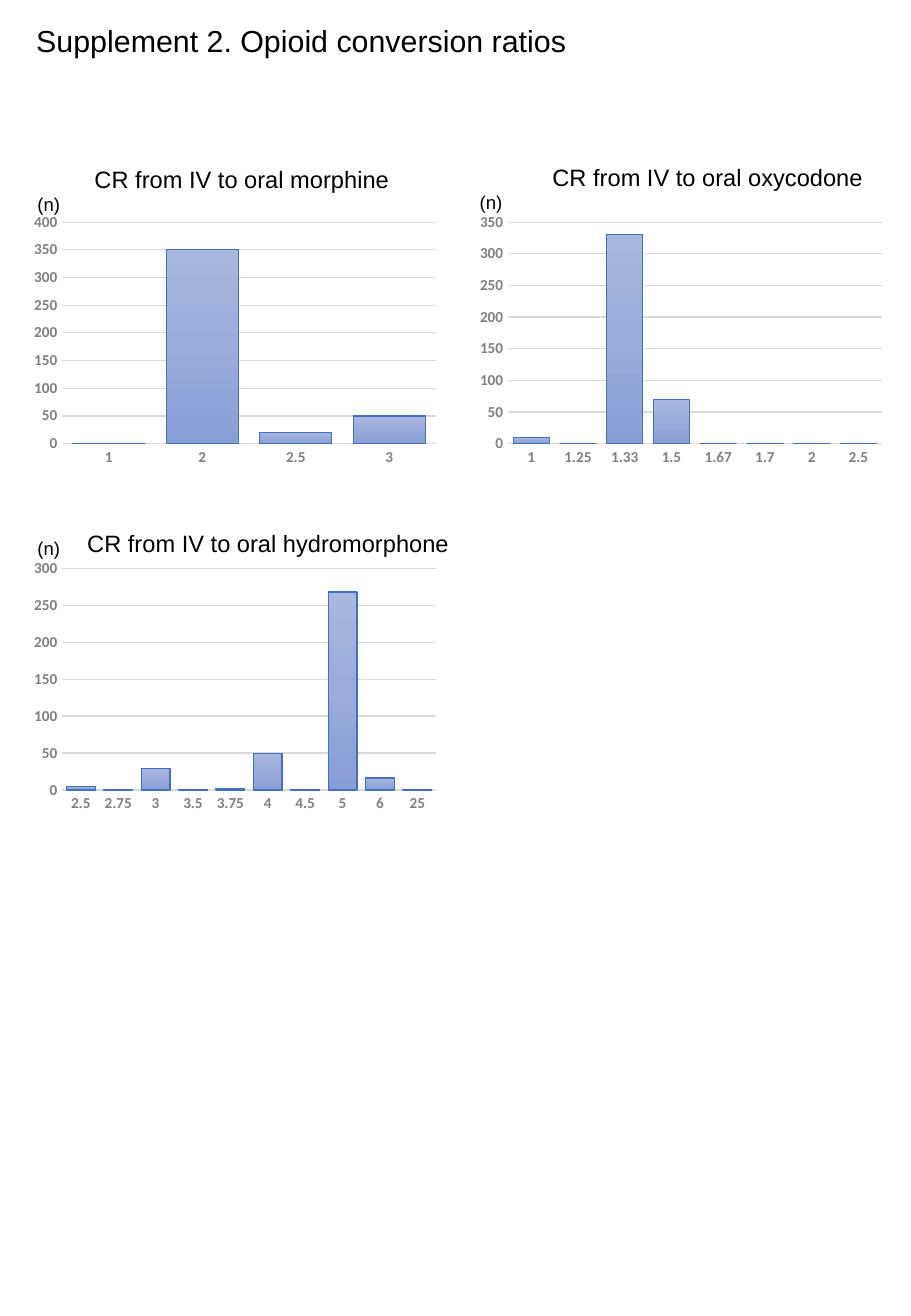
from dataclasses import dataclass

from lxml import etree
from pptx import Presentation
from pptx.chart.data import CategoryChartData
from pptx.dml.color import RGBColor
from pptx.enum.chart import XL_CHART_TYPE, XL_TICK_MARK
from pptx.enum.text import MSO_AUTO_SIZE
from pptx.oxml import parse_xml
from pptx.oxml.ns import nsdecls, qn
from pptx.util import Inches, Pt

COLUMN = XL_CHART_TYPE.COLUMN_CLUSTERED
NO_TICK = XL_TICK_MARK.NONE
GROW = MSO_AUTO_SIZE.SHAPE_TO_FIT_TEXT

WIDE, HIGH = 7.5, 10.83
LEFT, TOP = 0.2, 1.72
COL, ROW = 3.67, 2.85
CHART = (3.46, 2.17)
PLOT = {"x": 0.09, "y": 0.05, "w": 0.89, "h": 0.84}


@dataclass(frozen=True)
class Theme:
    ink: str = "000000"
    label: str = "808080"
    grid: str = "D9D9D9"
    edge: str = "436FC0"
    fade: tuple = ((0, "A8B7DF"), (50, "9AABD9"), (100, "889ED7"))
    text: str = "Arial"
    data: str = "Calibri"
    head: int = 18
    title: int = 14
    unit: int = 11
    base: int = 10
    tick: int = 9
    line: float = 0.75


THEME = Theme()

PANELS = (
    {"name": "morphine", "cell": (0, 0), "top": 400,
     "title": (0.48, -0.41, 2.84, 0.34), "unit": (0.01, -0.18),
     "data": {"1": 0, "2": 350, "2.5": 20, "3": 50}},
    {"name": "oxycodone", "cell": (1, 0), "top": 350,
     "title": (0.58, -0.43, 2.84, 0.34), "unit": (-0.02, -0.2),
     "data": {"1": 10, "1.25": 0, "1.33": 330, "1.5": 70,
              "1.67": 0, "1.7": 0, "2": 0, "2.5": 0}},
    {"name": "hydromorphone", "cell": (0, 1), "top": 300,
     "title": (0.42, -0.27, 3.43, 0.57), "unit": (0.01, -0.2),
     "data": {"2.5": 5, "2.75": 1, "3": 29, "3.5": 1, "3.75": 2,
              "4": 49, "4.5": 1, "5": 268, "6": 16, "25": 1}},
)


def put(item, **vals):
    for key, val in vals.items():
        setattr(item, key, val)


def style(font, name, size, color, bold=False):
    put(font, name=name, size=Pt(size), bold=bold)
    font.color.rgb = RGBColor.from_string(color)


def stroke(line, color):
    line.width = Pt(THEME.line)
    line.color.rgb = RGBColor.from_string(color)


def add_text(slide, words, box, size, wrap=True):
    frame = slide.shapes.add_textbox(*map(Inches, box)).text_frame
    put(frame, word_wrap=wrap, auto_size=GROW)
    run = frame.paragraphs[0].add_run()
    run.text = words
    style(run.font, THEME.text, size, THEME.ink)


def shade(bars):
    stops = "".join(
        f'<a:gs pos="{pos * 1000}"><a:srgbClr val="{color}"/></a:gs>'
        for pos, color in THEME.fade)
    bars.format.fill.gradient()
    props = bars.format.fill._xPr
    old = props.find(qn("a:gradFill"))
    props.replace(old, parse_xml(
        f'<a:gradFill {nsdecls("a")}><a:gsLst>{stops}</a:gsLst>'
        '<a:lin ang="5400000" scaled="0"/></a:gradFill>'))
    stroke(bars.format.line, THEME.edge)


def fit_plot(chart):
    area = chart._chartSpace.chart.plotArea
    old = area.find(qn("c:layout"))
    if old is not None:
        area.remove(old)
    layout = etree.Element(qn("c:layout"))
    manual = etree.SubElement(layout, qn("c:manualLayout"))
    rules = {"layoutTarget": "inner", "xMode": "edge", "yMode": "edge", **PLOT}
    for key, val in rules.items():
        etree.SubElement(manual, qn(f"c:{key}")).set("val", str(val))
    area.insert(0, layout)


def add_bars(slide, data, top, box):
    table = CategoryChartData()
    table.categories = list(data)
    table.add_series("Series 1", list(data.values()))
    chart = slide.shapes.add_chart(COLUMN, *map(Inches, box), table).chart
    put(chart, has_legend=False, has_title=False)
    style(chart.font, THEME.data, THEME.base, THEME.ink)
    plot = chart.plots[0]
    put(plot, gap_width=30, overlap=-24, vary_by_categories=False)
    shade(plot.series[0])
    for axis in (chart.category_axis, chart.value_axis):
        put(axis, major_tick_mark=NO_TICK, minor_tick_mark=NO_TICK)
        style(axis.tick_labels.font, THEME.data, THEME.tick, THEME.label, True)
    stroke(chart.category_axis.format.line, THEME.grid)
    scale = chart.value_axis
    put(scale, minimum_scale=0, maximum_scale=top, major_unit=50,
        has_major_gridlines=True)
    stroke(scale.major_gridlines.format.line, THEME.grid)
    scale.format.line.fill.background()
    fit_plot(chart)


def add_panel(slide, panel):
    col, row = panel["cell"]
    left, top = LEFT + col * COL, TOP + row * ROW
    add_bars(slide, panel["data"], panel["top"], (left, top, *CHART))
    right, down, wide, high = panel["title"]
    add_text(slide, f"CR from IV to oral {panel['name']}",
             (left + right, top + down, wide, high), THEME.title)
    right, down = panel["unit"]
    add_text(slide, "(n)", (left + right, top + down, 0.42, 0.47), THEME.unit)


def main():
    deck = Presentation()
    put(deck, slide_width=Inches(WIDE), slide_height=Inches(HIGH))
    slide = deck.slides.add_slide(deck.slide_layouts[6])
    add_text(slide, "Supplement 2. Opioid conversion ratios",
             (LEFT, 0.13, 4.61, 0.4), THEME.head, wrap=False)
    for panel in PANELS:
        add_panel(slide, panel)
    deck.save("out.pptx")


if __name__ == "__main__":
    main()
